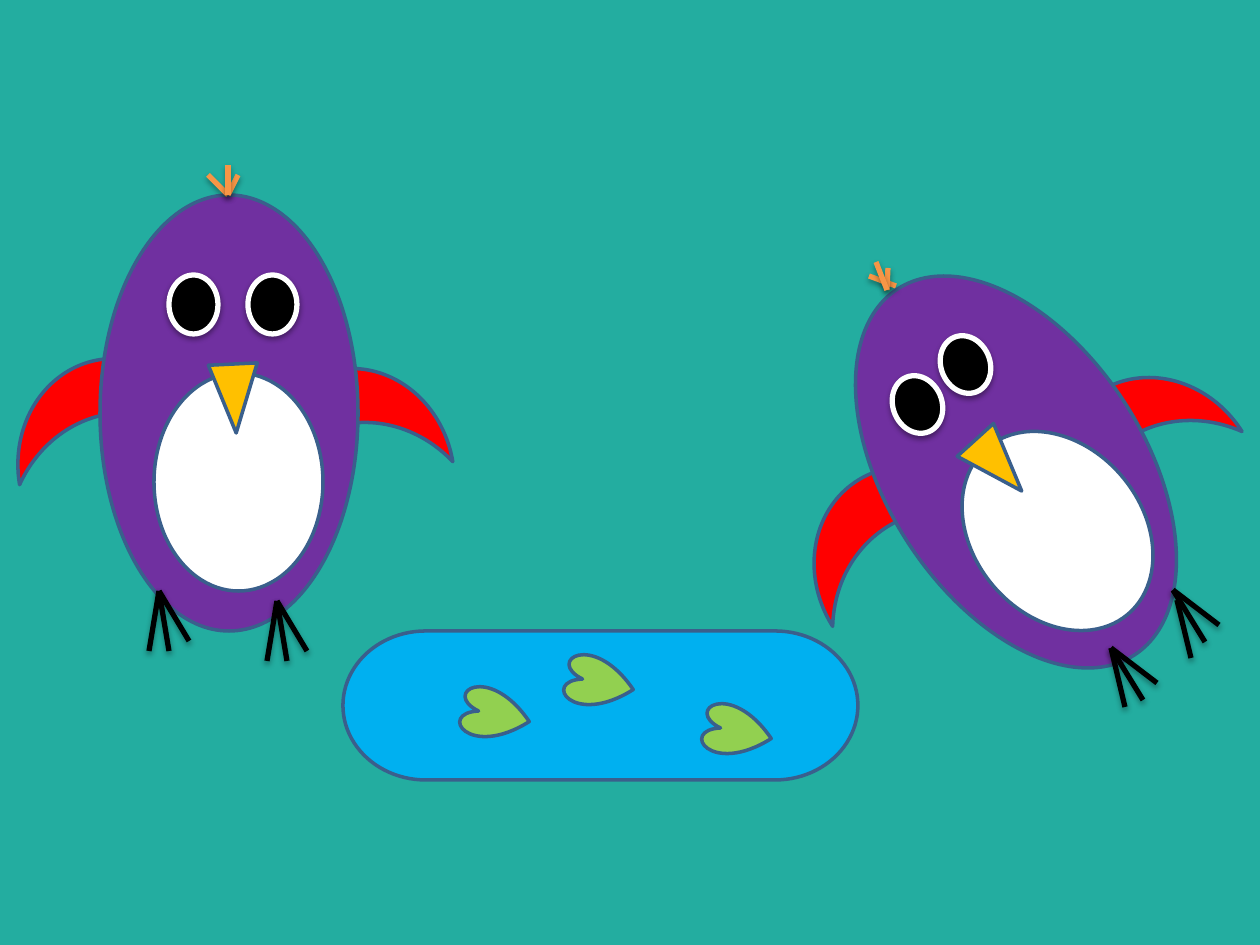
"""Build a slide with two penguins beside a pond."""
import dataclasses

import lxml.etree
import pptx
import pptx.dml.color
import pptx.enum.shapes
import pptx.oxml.ns
import pptx.util

RGBColor = pptx.dml.color.RGBColor
SHAPE = pptx.enum.shapes.MSO_SHAPE
PX = 914400 / 126

TEAL = RGBColor(0x23, 0xAD, 0xA0)
WATER = RGBColor(0x00, 0xB0, 0xF0)
LEAF = RGBColor(0x92, 0xD0, 0x50)
OUTLINE = RGBColor(0x3A, 0x5F, 0x8C)
RED = RGBColor(0xFF, 0x00, 0x00)
PURPLE = RGBColor(0x70, 0x30, 0xA0)
BLACK = RGBColor(0x00, 0x00, 0x00)
WHITE = RGBColor(0xFF, 0xFF, 0xFF)
ORANGE = RGBColor(0xF7, 0x96, 0x46)
YELLOW = RGBColor(0xFF, 0xC0, 0x00)

BODY_SIZE = (258, 436)
WING_SIZE = (110, 198)
EYE_SIZE = (49, 59)
BELLY_SIZE = (169, 218)
SMALL_SIZE = (49, 69)


@dataclasses.dataclass
class Pose:
    """Positions, relative to the body box, and turns of a penguin's parts."""

    wings: list
    wing_turn: float
    body_turn: float
    eyes: list
    eye_turn: float
    toes: list
    crest: list
    belly: tuple
    belly_turn: float
    beak: tuple
    beak_turn: float


def emu(pixels):
    """Turn px into EMU."""
    return pptx.util.Emu(round(pixels * PX))


def rays(x, y, offsets):
    """Return lines that fan out from one point."""
    return [(x, y, x + dx, y + dy) for dx, dy in offsets]


def set_shadow(shape, opacity=0, distance=0):
    """Give a shape a soft shadow straight below, or none if opacity is 0."""
    tag = pptx.oxml.ns.qn
    effects = lxml.etree.SubElement(shape._element.spPr, tag("a:effectLst"))
    if opacity:
        shadow = lxml.etree.SubElement(
            effects, tag("a:outerShdw"), blurRad="40000", dist=str(distance),
            dir="5400000", rotWithShape="0")
        color = lxml.etree.SubElement(shadow, tag("a:srgbClr"), val=str(BLACK))
        lxml.etree.SubElement(color, tag("a:alpha"), val=str(opacity * 1000))


def add_part(group, kind, origin, offset, size, fill, turn=0, line=OUTLINE,
             line_width=2, opacity=0, distance=0):
    """Add a filled preset shape at an offset from the origin."""
    left, top = origin[0] + offset[0], origin[1] + offset[1]
    shape = group.shapes.add_shape(kind, emu(left), emu(top), *map(emu, size))
    shape.rotation = turn
    shape.fill.solid()
    shape.fill.fore_color.rgb = fill
    shape.line.color.rgb = line
    shape.line.width = pptx.util.Pt(line_width)
    set_shadow(shape, opacity, distance)


def add_lines(group, origin, lines, color):
    """Add straight strokes given relative to the origin."""
    left, top = origin
    for x1, y1, x2, y2 in lines:
        connector = group.shapes.add_connector(
            pptx.enum.shapes.MSO_CONNECTOR.STRAIGHT,
            emu(left + x1), emu(top + y1), emu(left + x2), emu(top + y2))
        connector.line.color.rgb = color
        connector.line.width = pptx.util.Pt(3)
        set_shadow(connector, opacity=35, distance=23000)


def add_pond(slide, origin):
    """Draw the pond with its three leaves."""
    group = slide.shapes.add_group_shape()
    add_part(group, SHAPE.FLOWCHART_TERMINATOR, origin, (0, 0), (515, 149), WATER)
    for leaf in [(128, 49), (232, 17), (370, 66)]:
        add_part(group, SHAPE.HEART, origin, leaf, SMALL_SIZE, LEAF, turn=281.8)


def add_penguin(slide, origin, pose):
    """Draw a penguin whose body box starts at the origin."""
    group = slide.shapes.add_group_shape()
    oval = SHAPE.FLOWCHART_CONNECTOR
    for wing in pose.wings:
        add_part(group, SHAPE.MOON, origin, wing, WING_SIZE, RED, pose.wing_turn)
    add_part(group, oval, origin, (0, 0), BODY_SIZE, PURPLE, pose.body_turn)
    for eye in pose.eyes:
        add_part(group, oval, origin, eye, EYE_SIZE, BLACK, pose.eye_turn,
                 line=WHITE, line_width=3, opacity=38, distance=20000)
    add_lines(group, origin, pose.toes, BLACK)
    add_lines(group, origin, pose.crest, ORANGE)
    add_part(group, oval, origin, pose.belly, BELLY_SIZE, WHITE, pose.belly_turn)
    add_part(group, SHAPE.ISOSCELES_TRIANGLE, origin, pose.beak, SMALL_SIZE,
             YELLOW, pose.beak_turn)


UPRIGHT_TOES = [(-10, 60), (30, 50), (10, 60)]
UPRIGHT = Pose(
    wings=[(-47, 120), (191, 130)], wing_turn=80.4, body_turn=0,
    eyes=[(69, 80), (148, 80)], eye_turn=0,
    toes=rays(59, 396, UPRIGHT_TOES) + rays(177, 406, UPRIGHT_TOES),
    crest=rays(128, 0, [(-20, -20), (10, -20), (0, -30)]),
    belly=(54, 178), belly_turn=0, beak=(110, 169), beak_turn=177.2)

TILTED_TOES = [(46, 35), (32, 52)]
TILTED = Pose(
    wings=[(-55, 174), (187, 85)], wing_turn=57.7, body_turn=327.1,
    eyes=[(6, 121), (54, 81)], eye_turn=337.4,
    toes=rays(224, 394, TILTED_TOES + [(14, 59)])
    + rays(286, 336, TILTED_TOES) + [(290, 346, 304, 404)],
    crest=[(-18, 22, 9, 32), (1, 14, 0, 36), (-11, 8, 0, 36)],
    belly=(86, 168), belly_turn=319.9, beak=(87, 177), beak_turn=137.8)


def main():
    """Build and save the presentation."""
    presentation = pptx.Presentation()
    presentation.slide_width = emu(1260)
    presentation.slide_height = emu(945)
    slide = presentation.slides.add_slide(presentation.slide_layouts[6])
    slide.background.fill.solid()
    slide.background.fill.fore_color.rgb = TEAL
    add_pond(slide, (343, 631))
    add_penguin(slide, (887, 254), TILTED)
    add_penguin(slide, (100, 195), UPRIGHT)
    presentation.save("out.pptx")


if __name__ == "__main__":
    main()
